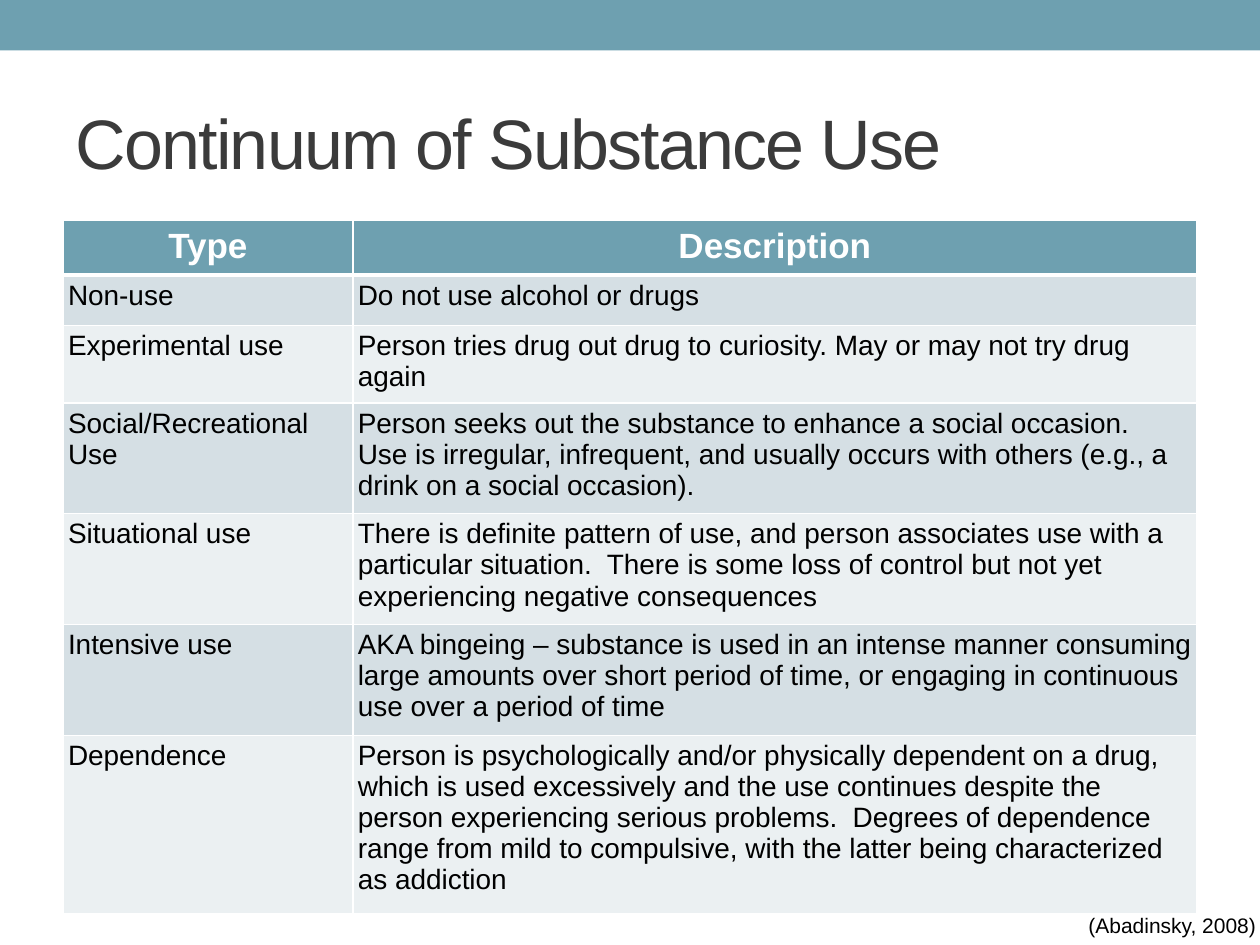
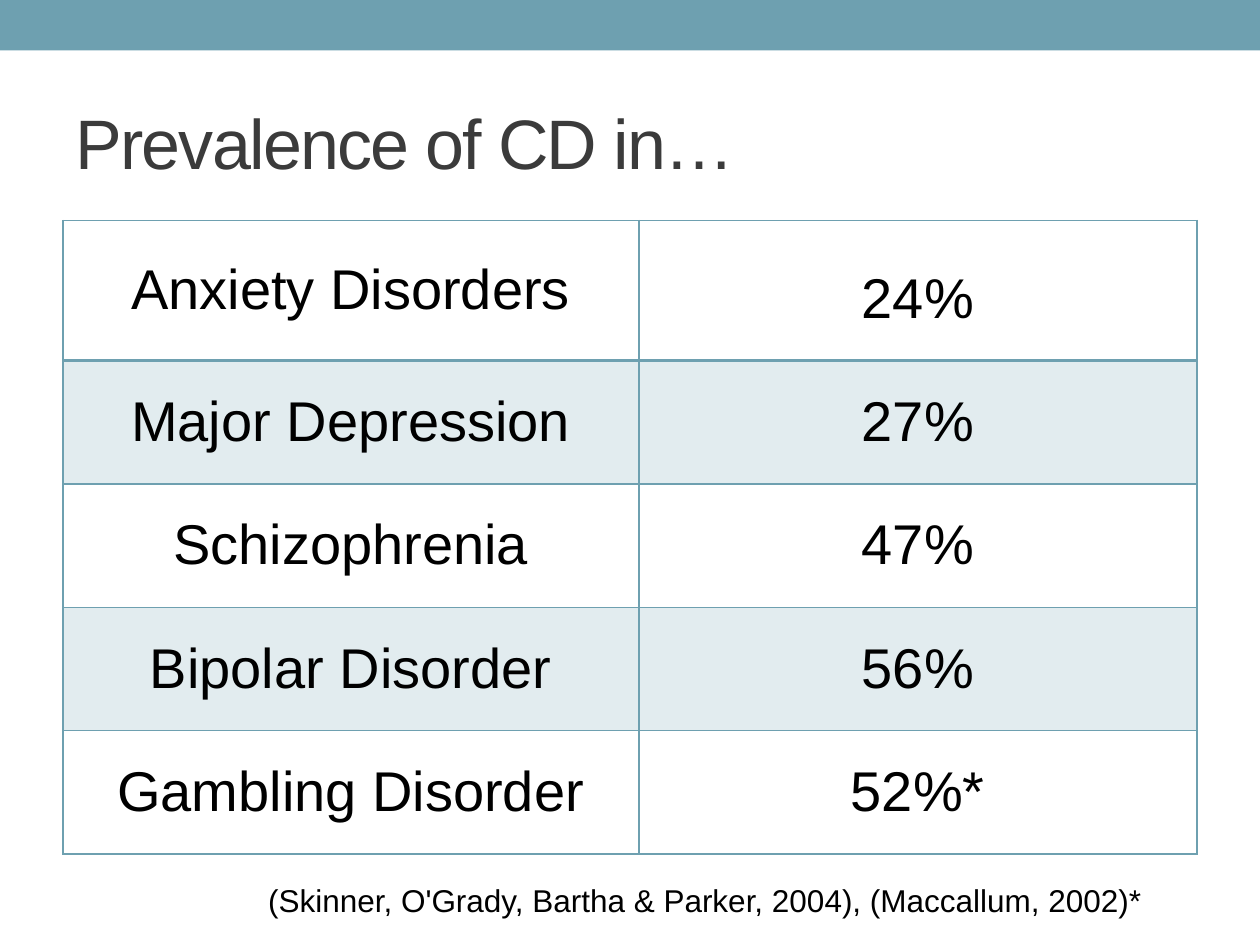
"""Build two slides on substance use: a continuum table and a prevalence table."""

from lxml.etree import SubElement
from pptx import Presentation
from pptx.dml.color import RGBColor
from pptx.enum.shapes import MSO_SHAPE
from pptx.enum.text import MSO_ANCHOR, PP_ALIGN
from pptx.oxml.ns import qn
from pptx.util import Inches, Pt

FONT = "Arial"
COLORS = {
    "teal": "6EA0B0",
    "title": "3B3B3B",
    "text": "000000",
    "white": "FFFFFF",
    "band_dark": "D5DFE4",
    "band_light": "EBF0F2",
    "band_tint": "E2ECEF",
}

CONTINUUM = [
    ("Type", "Description"),
    ("Non-use", "Do not use alcohol or drugs"),
    ("Experimental use",
     "Person tries drug out drug to curiosity. May or may not try drug again"),
    ("Social/Recreational Use",
     "Person seeks out the substance to enhance a social occasion.  Use is irregular, "
     "infrequent, and usually occurs with others (e.g., a drink on a social occasion)."),
    ("Situational use",
     "There is definite pattern of use, and person associates use with a particular "
     "situation.  There is some loss of control but not yet experiencing negative "
     "consequences"),
    ("Intensive use",
     "AKA bingeing – substance is used in an intense manner consuming large amounts over "
     "short period of time, or engaging in continuous use over a period of time"),
    ("Dependence",
     "Person is psychologically and/or physically dependent on a drug, which is used "
     "excessively and the use continues despite the person experiencing serious "
     "problems.  Degrees of dependence range from mild to compulsive, with the latter "
     "being characterized as addiction"),
]
PREVALENCE = [
    ("Anxiety Disorders", "24%"),
    ("Major Depression", "27%"),
    ("Schizophrenia", "47%"),
    ("Bipolar Disorder", "56%"),
    ("Gambling Disorder", "52%*"),
]

SLIDES = [
    {
        "title": "Continuum of Substance Use",
        "rows": CONTINUUM,
        "columns": (2.3, 6.7),
        "heights": (0.41, 0.4, 0.58, 0.82, 0.83, 0.82, 1.32),
        "size": 16,
        "align": PP_ALIGN.LEFT,
        "anchor": MSO_ANCHOR.TOP,
        "margins": (0.04, 0.04),
        "bands": ("band_light", "band_dark"),
        "border": "white",
        "rule": 3,
        "header": True,
        "source": ("(Abadinsky, 2008)", 12, (8.54, 7.19, 1.61, 0.3)),
    },
    {
        "title": "Prevalence of CD in…",
        "rows": PREVALENCE,
        "columns": (4.57, 4.43),
        "heights": (1.11, 0.98, 0.98, 0.98, 0.98),
        "size": 32,
        "align": PP_ALIGN.CENTER,
        "anchor": MSO_ANCHOR.MIDDLE,
        "margins": (0.11, 0.05),
        "bands": ("white", "band_tint"),
        "border": "teal",
        "rule": 2,
        "header": False,
        "top_margins": {(0, 1): 0.19},
        "source": ("(Skinner, O'Grady, Bartha & Parker, 2004), (Maccallum, 2002)*",
                   18, (2.03, 6.94, 7.56, 0.4)),
    },
]


def color(name):
    return RGBColor.from_string(COLORS[name])


def write(frame, text, size, ink="text", bold=False, align=PP_ALIGN.LEFT):
    frame.text = text
    frame.word_wrap = True
    para = frame.paragraphs[0]
    para.alignment = align
    span = para.runs[0]
    span.font.name = FONT
    span.font.size = Pt(size)
    span.font.bold = bold
    span.font.color.rgb = color(ink)
    return span


def add_text(page, place, text, size, ink="text", anchor=MSO_ANCHOR.TOP):
    box = page.shapes.add_textbox(*map(Inches, place))
    box.text_frame.vertical_anchor = anchor
    return write(box.text_frame, text, size, ink)


def add_frame(page, title):
    band = page.shapes.add_shape(MSO_SHAPE.RECTANGLE, 0, 0, Inches(10), Inches(0.4))
    band.shadow.inherit = False
    band.fill.solid()
    band.fill.fore_color.rgb = color("teal")
    band.line.fill.background()
    span = add_text(page, (0.5, 0.58, 9, 1.08), title, 40, "title", MSO_ANCHOR.MIDDLE)
    span.font._element.set("spc", "-100")


def set_borders(cell, ink, widths):
    properties = cell._tc.get_or_add_tcPr()
    for index, (side, width) in enumerate(widths.items()):
        line = SubElement(properties, qn(f"a:ln{side}"), w=str(Pt(width)))
        fill = SubElement(line, qn("a:solidFill"))
        SubElement(fill, qn("a:srgbClr"), val=COLORS[ink])
        properties.insert(index, line)


def style_cell(cell, text, row, column, style):
    is_header = style["header"] and row == 0
    side, edge = (0.1, 0.05) if is_header else style["margins"]
    cell.margin_left = cell.margin_right = Inches(side)
    cell.margin_bottom = Inches(edge)
    cell.margin_top = Inches(style.get("top_margins", {}).get((row, column), edge))
    cell.vertical_anchor = style["anchor"]
    cell.fill.solid()
    cell.fill.fore_color.rgb = color("teal" if is_header else style["bands"][row % 2])
    set_borders(cell, style["border"], {
        "L": 1,
        "R": 1,
        "T": style["rule"] if row == 1 else 1,
        "B": style["rule"] if row == 0 else 1,
    })
    if is_header:
        write(cell.text_frame, text, 20, "white", True, PP_ALIGN.CENTER)
    else:
        write(cell.text_frame, text, style["size"], align=style["align"])


def add_grid(page, style):
    rows, columns, heights = style["rows"], style["columns"], style["heights"]
    place = (0.5, 1.75, sum(columns), sum(heights))
    table = page.shapes.add_table(len(rows), len(columns), *map(Inches, place)).table
    table.first_row = style["header"]
    table.horz_banding = False
    for column, width in zip(table.columns, columns):
        column.width = Inches(width)
    for row, height in zip(table.rows, heights):
        row.height = Inches(height)
    for row, texts in enumerate(rows):
        for column, text in enumerate(texts):
            style_cell(table.cell(row, column), text, row, column, style)


def main():
    deck = Presentation()
    deck.slide_width, deck.slide_height = Inches(10), Inches(7.5)
    for style in SLIDES:
        page = deck.slides.add_slide(deck.slide_layouts[6])
        add_frame(page, style["title"])
        add_grid(page, style)
        text, size, place = style["source"]
        add_text(page, place, text, size)
    deck.save("out.pptx")


if __name__ == "__main__":
    main()
